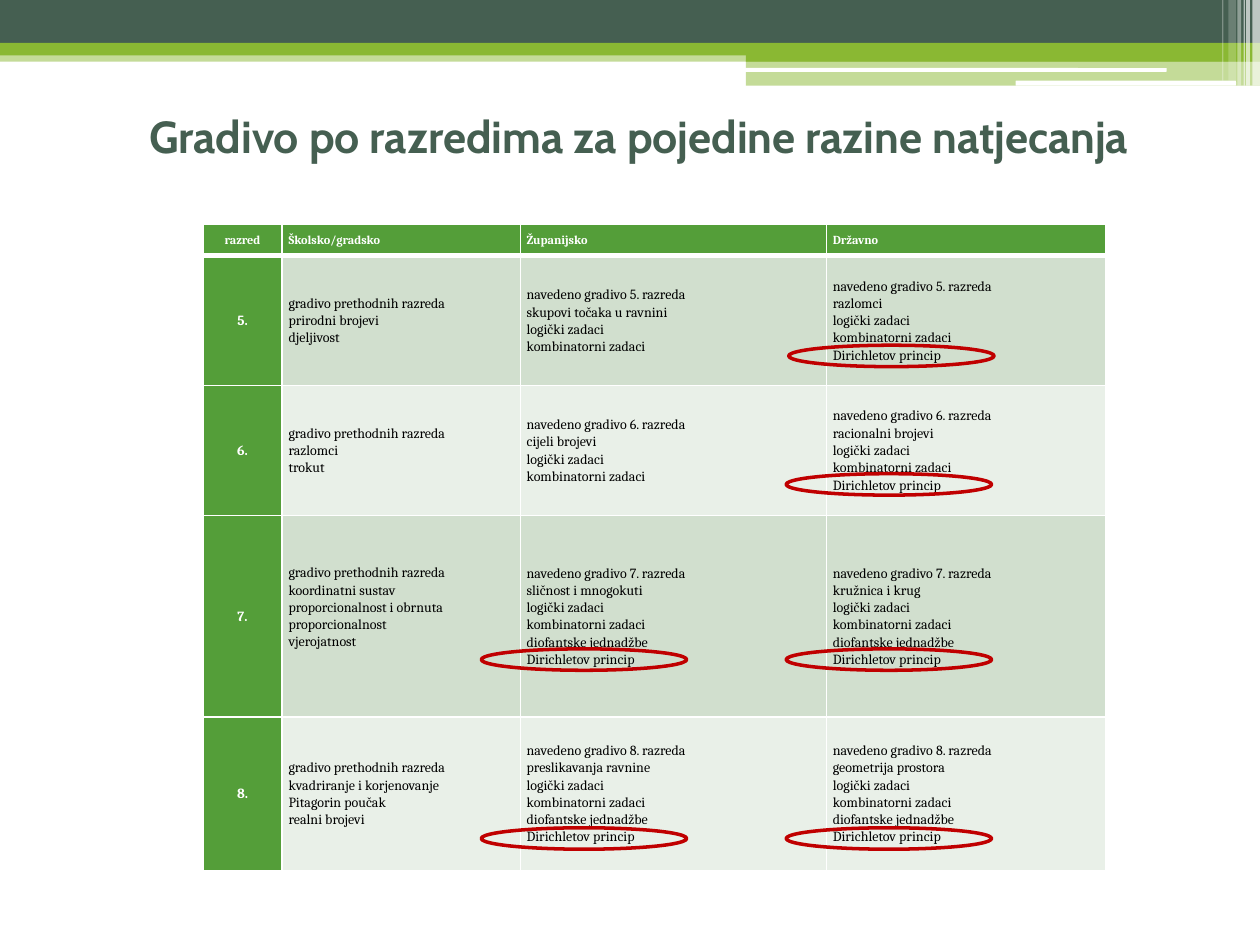
from dataclasses import dataclass

import pptx
import pptx.dml.color
import pptx.enum.shapes
import pptx.enum.text
import pptx.oxml
import pptx.oxml.ns
import pptx.util

Inches = pptx.util.Inches
Pt = pptx.util.Pt
SHAPES = pptx.enum.shapes.MSO_SHAPE
ALIGN = pptx.enum.text.PP_ALIGN
ANCHOR = pptx.enum.text.MSO_ANCHOR

WHITE, BLACK, RED = "FFFFFF", "000000", "C00000"
DARK, LIME, GREEN = "455F51", "8AB833", "549E39"
BAND_FILLS = ["D1DFCE", "E9F0E8"]
LINE_HEIGHT = 0.14


@dataclass
class Bar:
    left: float
    top: float
    width: float
    height: float
    color: str
    opacity: int = 100
    rounded: bool = False


@dataclass
class Grade:
    number: int
    height: float
    school: list[str]
    county: list[str]
    state: list[str]
    lift: float = 0  # extra bottom margin that raises the school topics


BARS = [
    Bar(0, 0.4, 10, 0.09, LIME, 50),
    Bar(0, 0, 10, 0.34, DARK),
    Bar(0, 0.34, 10, 0.1, LIME),
    Bar(5.92, 0.39, 4.08, 0.1, LIME),
    Bar(5.92, 0.48, 4.08, 0.2, LIME, 50),
    Bar(5.91, 0.54, 3.35, 0.03, WHITE, rounded=True),
    Bar(8.06, 0.64, 1.75, 0.04, WHITE, rounded=True),
    Bar(9.94, 0, 0.06, 0.68, WHITE, 65),
    Bar(9.89, 0, 0.03, 0.68, WHITE, 65),
    Bar(9.87, 0, 0.01, 0.68, WHITE, 60),
    Bar(9.82, 0, 0.03, 0.68, WHITE, 40),
    Bar(9.75, 0, 0.06, 0.64, WHITE, 20),
    Bar(9.7, 0, 0.01, 0.64, WHITE, 30),
]

HEADERS = ["razred", "Školsko/gradsko", "Županijsko", "Državno"]
COLUMN_WIDTHS = [0.63, 1.89, 2.43, 2.22]
HEADER_HEIGHT = 0.25
PREVIOUS = "gradivo prethodnih razreda"
PUZZLES = ["logički zadaci", "kombinatorni zadaci"]
DIRICHLET = "Dirichletov princip"
ADVANCED = PUZZLES + ["diofantske jednadžbe", DIRICHLET]

GRADES = [
    Grade(5, 1.03, ["prirodni brojevi", "djeljivost"],
          ["skupovi točaka u ravnini"] + PUZZLES,
          ["razlomci"] + PUZZLES + [DIRICHLET]),
    Grade(6, 1.03, ["razlomci", "trokut"],
          ["cijeli brojevi"] + PUZZLES,
          ["racionalni brojevi"] + PUZZLES + [DIRICHLET]),
    Grade(7, 1.6, ["koordinatni sustav", "proporcionalnost i obrnuta",
                   "proporcionalnost", "vjerojatnost"],
          ["sličnost i mnogokuti"] + ADVANCED,
          ["kružnica i krug"] + ADVANCED, LINE_HEIGHT),
    Grade(8, 1.22, ["kvadriranje i korjenovanje", "Pitagorin poučak", "realni brojevi"],
          ["preslikavanja ravnine"] + ADVANCED,
          ["geometrija prostora"] + ADVANCED),
]

# Left and top of each ellipse around the Dirichlet principle
HIGHLIGHTS = [(6.26, 2.74), (6.24, 5.15), (6.24, 3.76),
              (3.82, 5.15), (3.82, 6.57), (6.24, 6.57)]


def rgb(color: str) -> pptx.dml.color.RGBColor:
    return pptx.dml.color.RGBColor.from_string(color)


def add_run(paragraph, text: str, font: str, size: float, color: str, bold: bool) -> None:
    run = paragraph.add_run()
    run.text = text
    run.font.name = font
    run.font.size = Pt(size)
    run.font.bold = bold
    run.font.color.rgb = rgb(color)


def add_bar(slide, bar: Bar) -> None:
    kind = SHAPES.ROUNDED_RECTANGLE if bar.rounded else SHAPES.RECTANGLE
    shape = slide.shapes.add_shape(kind, Inches(bar.left), Inches(bar.top),
                                   Inches(bar.width), Inches(bar.height))
    shape.shadow.inherit = False
    shape.line.fill.background()
    shape.fill.solid()
    shape.fill.fore_color.rgb = rgb(bar.color)
    if bar.opacity < 100:
        color = shape.fill._xPr.find(".//" + pptx.oxml.ns.qn("a:srgbClr"))
        color.append(pptx.oxml.parse_xml(
            f'<a:alpha {pptx.oxml.ns.nsdecls("a")} val="{bar.opacity * 1000}"/>'))


def add_borders(cell, top: float = 1, bottom: float = 1) -> None:
    properties = cell._tc.get_or_add_tcPr()
    for side, width in {"L": 1, "R": 1, "T": top, "B": bottom}.items():
        properties.append(pptx.oxml.parse_xml(
            f'<a:ln{side} {pptx.oxml.ns.nsdecls("a")} w="{Pt(width)}">'
            f'<a:solidFill><a:srgbClr val="{WHITE}"/></a:solidFill></a:ln{side}>'))


def fill_cell(cell, lines: list[str], fill: str, size: float = 8, strong: bool = False,
              centered: bool = False, lift: float = 0) -> None:
    cell.margin_left = cell.margin_right = Inches(0.05)
    cell.margin_top = Inches(0.03)
    cell.margin_bottom = Inches(0.03 + lift)
    cell.vertical_anchor = ANCHOR.MIDDLE
    cell.fill.solid()
    cell.fill.fore_color.rgb = rgb(fill)
    for index, line in enumerate(lines):
        paragraph = cell.text_frame.add_paragraph() if index else cell.text_frame.paragraphs[0]
        paragraph.alignment = ALIGN.CENTER if centered else ALIGN.LEFT
        paragraph.line_spacing = 1.07
        add_run(paragraph, line, "Cambria", size, WHITE if strong else BLACK, strong)


def add_grade_table(slide) -> None:
    heights = [HEADER_HEIGHT] + [grade.height for grade in GRADES]
    table = slide.shapes.add_table(len(heights), len(HEADERS), Inches(1.61), Inches(1.78),
                                   Inches(sum(COLUMN_WIDTHS)), Inches(sum(heights))).table
    for column, width in zip(table.columns, COLUMN_WIDTHS):
        column.width = Inches(width)
    for row, height in zip(table.rows, heights):
        row.height = Inches(height)

    # Header row with a thick rule below
    for index, header in enumerate(HEADERS):
        cell = table.cell(0, index)
        add_borders(cell, bottom=3)
        fill_cell(cell, [header], GREEN, size=7, strong=True, centered=index == 0)

    # One row per grade
    for row, grade in enumerate(GRADES, start=1):
        for column in range(len(HEADERS)):
            add_borders(table.cell(row, column), top=3 if row == 1 else 1)
        band = BAND_FILLS[(row - 1) % 2]
        listed = f"navedeno gradivo {grade.number}. razreda"
        fill_cell(table.cell(row, 0), [f"{grade.number}."], GREEN, strong=True, centered=True)
        fill_cell(table.cell(row, 1), [PREVIOUS] + grade.school, band, lift=grade.lift)
        fill_cell(table.cell(row, 2), [listed] + grade.county, band)
        fill_cell(table.cell(row, 3), [listed] + grade.state, band)


def add_highlight(slide, left: float, top: float) -> None:
    shape = slide.shapes.add_shape(SHAPES.OVAL, Inches(left), Inches(top),
                                   Inches(1.63), Inches(0.17))
    shape.shadow.inherit = False
    shape.fill.background()
    shape.line.color.rgb = rgb(RED)
    shape.line.width = Pt(2)


def format_title(title) -> None:
    title.left, title.top = Inches(0.43), Inches(0.84)
    title.width, title.height = Inches(9.28), Inches(0.47)
    frame = title.text_frame
    frame.auto_size = pptx.enum.text.MSO_AUTO_SIZE.NONE
    frame.vertical_anchor = ANCHOR.MIDDLE
    paragraph = frame.paragraphs[0]
    paragraph.alignment = ALIGN.CENTER
    add_run(paragraph, "Gradivo po razredima za pojedine razine natjecanja",
            "Cabin", 25.6, DARK, True)


def main() -> None:
    presentation = pptx.Presentation()
    presentation.slide_width, presentation.slide_height = Inches(10), Inches(7.5)
    slide = presentation.slides.add_slide(presentation.slide_layouts[5])
    format_title(slide.shapes.title)
    for bar in BARS:
        add_bar(slide, bar)
    add_grade_table(slide)
    for left, top in HIGHLIGHTS:
        add_highlight(slide, left, top)
    presentation.save("out.pptx")


if __name__ == "__main__":
    main()
